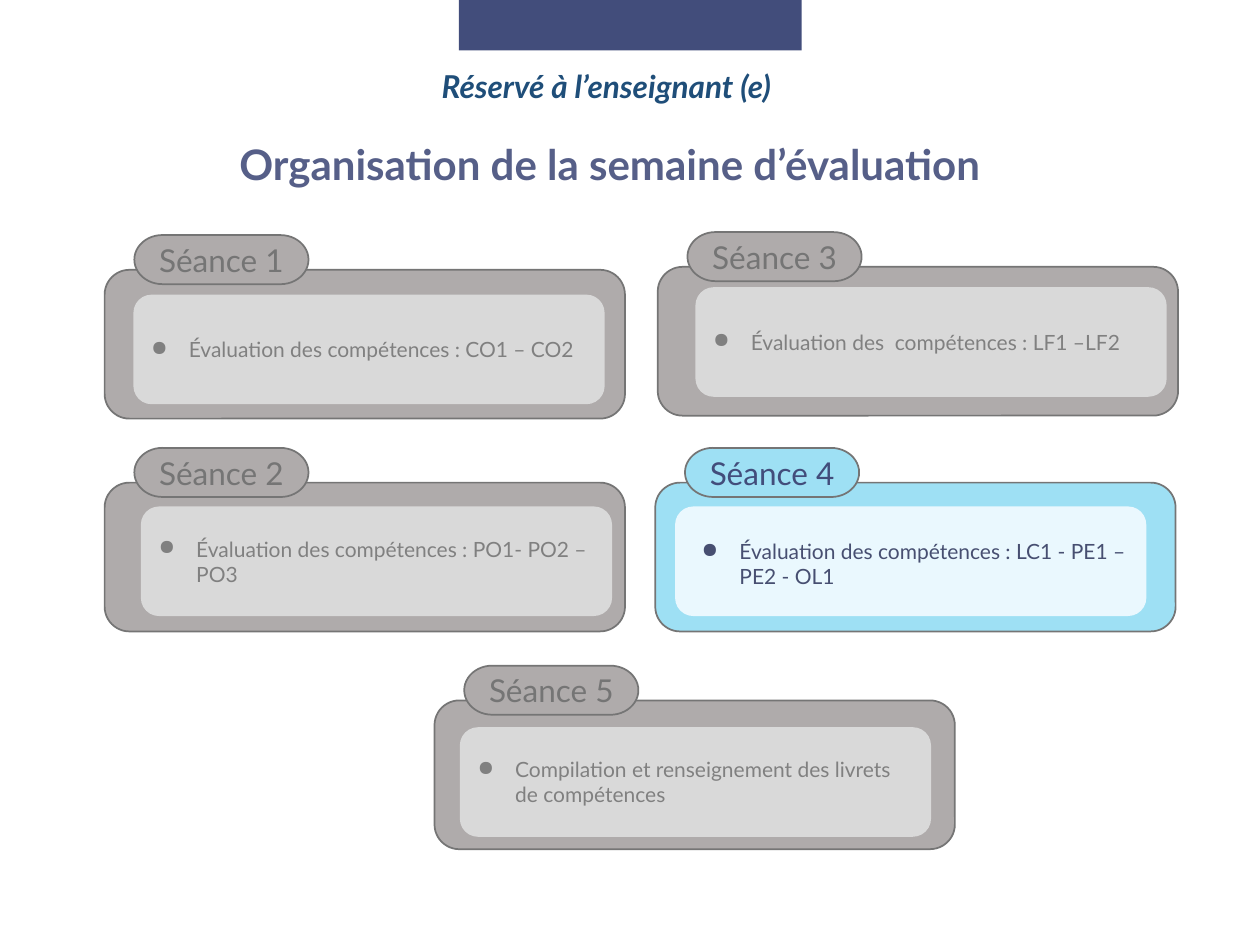
"""Build the slide that shows the five sessions of the assessment week."""
import pptx
import pptx.util
import pptx.dml.color
import pptx.enum.shapes
import pptx.enum.text
import lxml.etree
from pptx.util import Cm

Kind = pptx.enum.shapes.MSO_SHAPE
Align = pptx.enum.text.PP_ALIGN
Anchor = pptx.enum.text.MSO_ANCHOR
hues = {
    "navy": "424D7B", "title": "565F88", "note": "1F4E79",
    "grey": "AFABAB", "edge": "757575", "pale": "D9D9D9", "dim": "808080",
    "sky": "9EE0F4", "ice": "EAF8FE", "ink": "474F71",
}


def draw(kind, left, top, width, height, fill=None, edge=None):
    shape = page.shapes.add_shape(kind, Cm(left), Cm(top), Cm(width), Cm(height))
    shape.shadow.inherit = False
    if fill:
        shape.fill.solid()
        shape.fill.fore_color.rgb = pptx.dml.color.RGBColor.from_string(hues[fill])
    else:
        shape.fill.background()
    if edge:
        shape.line.color.rgb = pptx.dml.color.RGBColor.from_string(hues[edge])
        shape.line.width = pptx.util.Pt(1)
    else:
        shape.line.fill.background()
    return shape


def write(shape, text, size, hue, align=Align.CENTER, anchor=Anchor.MIDDLE):
    frame = shape.text_frame
    frame.word_wrap = True
    frame.vertical_anchor = anchor
    para = frame.paragraphs[0]
    para.alignment = align
    run = para.add_run()
    run.text = text
    run.font.name = "Lato"
    run.font.size = pptx.util.Pt(size)
    run.font.color.rgb = pptx.dml.color.RGBColor.from_string(hues[hue])
    return para


deck = pptx.Presentation()
deck.slide_width, deck.slide_height = Cm(25.4), Cm(19.05)
page = deck.slides.add_slide(deck.slide_layouts[6])

draw(Kind.RECTANGLE, 9.25, 0, 6.91, 1.02, "navy")
heads = [
    ("Organisation de la semaine d’évaluation ", 24, "title", False, Anchor.MIDDLE,
     (1.45, 2.36, 21.89, 2.01)),
    ("Réservé à l’enseignant (e)", 18, "note", True, Anchor.TOP,
     (8.53, 1.32, 7.39, 1.7)),
]
for text, size, hue, slant, anchor, place in heads:
    box = page.shapes.add_textbox(*[Cm(n) for n in place])
    para = write(box, text, size, hue, anchor=anchor)
    para.line_spacing = 0.9
    para.runs[0].font.bold = True
    para.runs[0].font.italic = slant

dull = ("grey", "pale", "edge", "dim")
live = ("sky", "ice", "navy", "ink")
cards = [
    ("Séance 1", "Évaluation des compétences : CO1 – CO2",
     (2.11, 5.44), (2.69, 5.94), (2.69, 5.94), dull),
    ("Séance 2", "Évaluation des compétences : PO1- PO2 – PO3",
     (2.11, 9.73), (2.84, 10.21), (2.84, 10.21), dull),
    ("Séance 3", "Évaluation des  compétences : LF1 –LF2",
     (13.26, 5.38), (14.02, 5.79), (14.02, 5.79), dull),
    ("Séance 4", "Évaluation des compétences : LC1 - PE1 – PE2 - OL1",
     (13.21, 9.73), (13.61, 10.21), (13.79, 10.26), live),
    ("Séance 5", "Compilation et renseignement des livrets de compétences",
     (8.76, 14.12), (9.27, 14.66), (9.27, 14.66), dull),
]
for name, text, (left, top), inner, spot, (fill, pale, label, ink) in cards:
    draw(Kind.ROUNDED_RECTANGLE, left, top, 10.49, 3, fill, "edge")
    tab = draw(Kind.FLOWCHART_TERMINATOR, left + 0.6, top - 0.7, 3.51, 0.99, fill, "edge")
    write(tab, name, 18, label)
    panel = draw(Kind.ROUNDED_RECTANGLE, *inner, 9.5, 2.21, pale)
    if spot != inner:
        panel = draw(Kind.ROUNDED_RECTANGLE, *spot, 9.5, 2.21)
    para = write(panel, text, 12, ink, Align.LEFT)
    props = para._p.get_or_add_pPr()
    props.set("marL", str(Cm(0.76)))
    props.set("indent", str(Cm(-0.76)))
    mark = lxml.etree.SubElement(props, pptx.oxml.ns.qn("a:buChar"))
    mark.set("char", "●")

deck.save("out.pptx")
